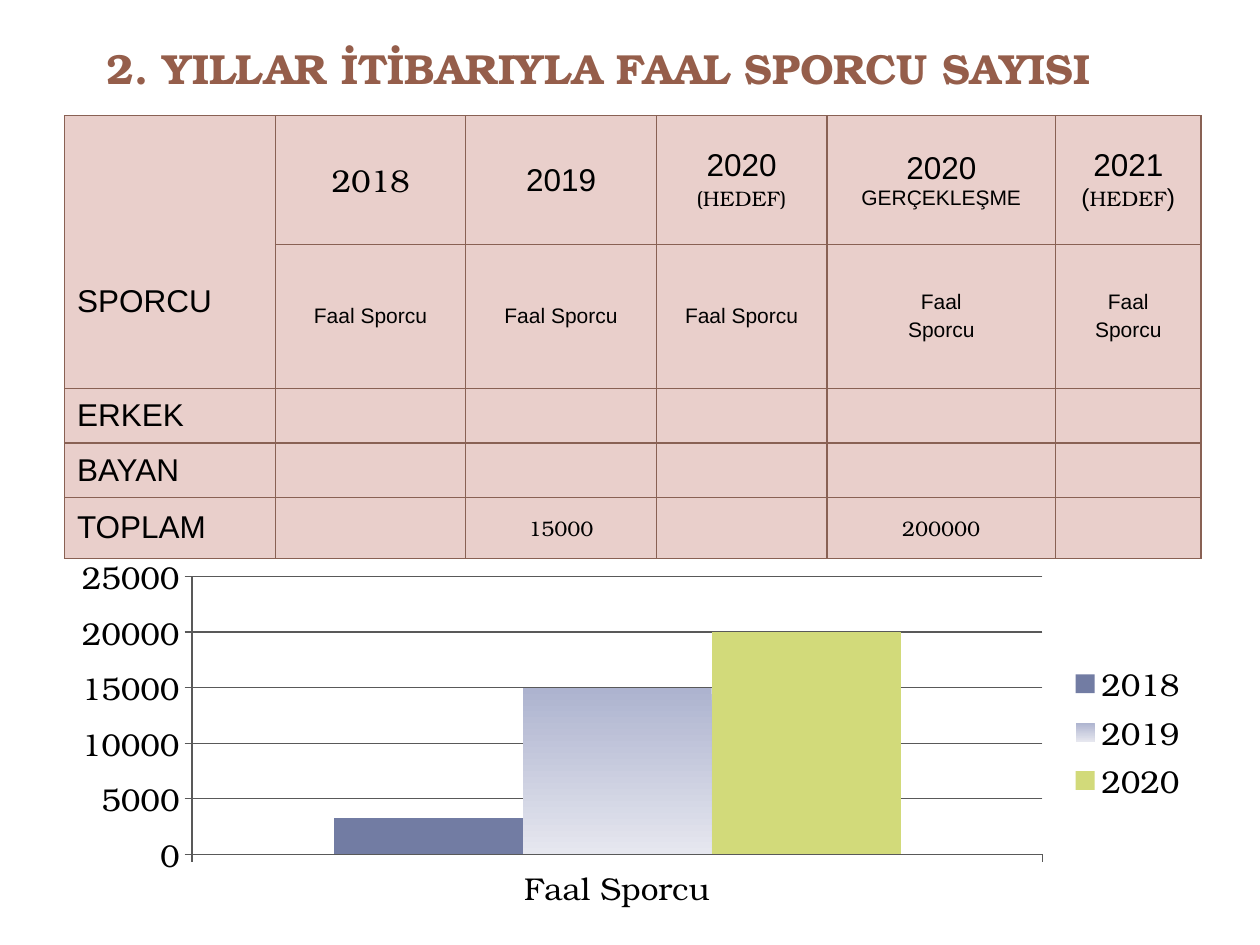
from dataclasses import dataclass

import pptx
import pptx.chart.data
import pptx.dml.color
import pptx.enum.chart
import pptx.enum.text
import pptx.oxml
import pptx.oxml.ns
import pptx.util

Cm, Pt = pptx.util.Cm, pptx.util.Pt
ALIGN, ANCHOR = pptx.enum.text.PP_ALIGN, pptx.enum.text.MSO_ANCHOR
SANS, SERIF = "Arial", "TeX Gyre Bonum"
COLORS = {
    "title": "955E4B", "text": "000000", "cell": "E9CFCB", "border": "896154",
    "axis": "595959", "2018": "727CA3", "2019 top": "ADB3CF",
    "2019 bottom": "E6E7EF", "2020": "D2DA7A",
}


@dataclass
class Run:
    text: str
    size: int = 18
    font: str = SANS


@dataclass
class CellText:
    row: int
    column: int
    lines: list[list[Run]]
    align: ALIGN = ALIGN.CENTER
    space_ratio: float = 0.2


def rgb(name: str) -> pptx.dml.color.RGBColor:
    return pptx.dml.color.RGBColor.from_string(COLORS[name])


def apply_format(target, values: dict) -> None:
    for name, value in values.items():
        setattr(target, name, value)


def add_run(paragraph, run: Run, color: str = "text", bold: bool = False) -> None:
    part = paragraph.add_run()
    part.text = run.text
    apply_format(part.font, {"size": Pt(run.size), "name": run.font, "bold": bold})
    part.font.color.rgb = rgb(color)


def write_cell(cell, content: CellText) -> None:
    for index, line in enumerate(content.lines):
        frame = cell.text_frame
        paragraph = frame.paragraphs[0] if index == 0 else frame.add_paragraph()
        apply_format(paragraph, {
            "alignment": content.align,
            "space_before": Pt(round(line[0].size * content.space_ratio, 1)),
        })
        for run in line:
            add_run(paragraph, run)


def style_cell(cell) -> None:
    cell.vertical_anchor = ANCHOR.MIDDLE
    cell.fill.solid()
    cell.fill.fore_color.rgb = rgb("cell")
    properties = cell._tc.get_or_add_tcPr()
    # Borders come before the fill in the cell properties
    for index, side in enumerate(("lnL", "lnR", "lnT", "lnB")):
        properties.insert(index, pptx.oxml.parse_xml(
            f'<a:{side} {pptx.oxml.ns.nsdecls("a")} w="9525"><a:solidFill>'
            f'<a:srgbClr val="{COLORS["border"]}"/></a:solidFill></a:{side}>'))


def add_title(slide) -> None:
    box = slide.shapes.add_textbox(Cm(1.9), Cm(0.74), Cm(22.86), Cm(3.17))
    apply_format(box.text_frame, {"word_wrap": True, "vertical_anchor": ANCHOR.TOP})
    add_run(box.text_frame.paragraphs[0],
            Run("2. YILLAR İTİBARIYLA FAAL SPORCU SAYISI", 24, SERIF), "title", True)


def add_athlete_table(slide) -> None:
    widths = [4.25, 3.84, 3.84, 3.44, 4.61, 2.93]
    heights = [2.6, 2.9, 1.1, 1.1, 1.22]
    table = slide.shapes.add_table(
        len(heights), len(widths), Cm(1.3), Cm(2.33),
        Cm(sum(widths)), Cm(sum(heights))).table
    apply_format(table, {"first_row": False, "horz_banding": False})
    for column, width in zip(table.columns, widths):
        column.width = Cm(width)
    for row, height in zip(table.rows, heights):
        row.height = Cm(height)
    for cell in table.iter_cells():
        style_cell(cell)

    # The row heading spans both header rows
    heading = table.cell(0, 0)
    heading.merge(table.cell(1, 0))
    apply_format(heading, {"vertical_anchor": ANCHOR.BOTTOM, "margin_bottom": Cm(1.4)})

    years = [
        [[Run("2018", font=SERIF)]],
        [[Run("2019")]],
        [[Run("2020")], [Run("(HEDEF)", 12, SERIF)]],
        [[Run("2020")], [Run("GERÇEKLEŞME", 12)]],
        [[Run("2021")], [Run("(", 14), Run("HEDEF", 12, SERIF), Run(")", 14)]],
    ]
    one_line = [[Run("Faal Sporcu", 12)]]
    two_lines = [[Run("Faal", 12)], [Run("Sporcu", 12)]]
    contents = [CellText(0, column, lines, space_ratio=0)
                for column, lines in enumerate(years, 1)]
    contents += [CellText(1, column, one_line if column < 4 else two_lines)
                 for column in range(1, 6)]
    contents += [CellText(row, 0, [[Run(label)]], ALIGN.LEFT)
                 for row, label in ((0, "SPORCU"), (2, "ERKEK"), (3, "BAYAN"), (4, "TOPLAM"))]
    contents += [CellText(4, column, [[Run(total, 12, SERIF)]])
                 for column, total in ((2, "15000"), (4, "200000"))]
    for content in contents:
        write_cell(table.cell(content.row, content.column), content)


def add_athlete_chart(slide) -> None:
    data = pptx.chart.data.CategoryChartData()
    data.categories = ["Faal Sporcu"]
    for year, athletes in (("2018", 3300), ("2019", 15000), ("2020", 20000)):
        data.add_series(year, [athletes])
    chart = slide.shapes.add_chart(
        pptx.enum.chart.XL_CHART_TYPE.COLUMN_CLUSTERED,
        Cm(1.19), Cm(11.05), Cm(23.01), Cm(7.42), data).chart
    apply_format(chart, {"has_title": False, "has_legend": True})
    apply_format(chart.font, {"size": Pt(18), "name": SERIF})
    chart.font.color.rgb = rgb("text")
    apply_format(chart.legend, {
        "position": pptx.enum.chart.XL_LEGEND_POSITION.RIGHT, "include_in_layout": False})

    # Axes and gridlines
    apply_format(chart.value_axis, {
        "minimum_scale": 0, "maximum_scale": 25000, "major_unit": 5000,
        "has_major_gridlines": True})
    for axis in (chart.category_axis, chart.value_axis):
        axis.major_tick_mark = pptx.enum.chart.XL_TICK_MARK.OUTSIDE
    for part in (chart.category_axis, chart.value_axis, chart.value_axis.major_gridlines):
        part.format.line.color.rgb = rgb("axis")
        part.format.line.width = Pt(0.75)

    # Columns
    plot = chart.plots[0]
    apply_format(plot, {"gap_width": 150, "overlap": 0, "vary_by_categories": False})
    for series in plot.series:
        fill = series.format.fill
        if series.name in COLORS:
            fill.solid()
            fill.fore_color.rgb = rgb(series.name)
        else:
            fill.gradient()
            fill.gradient_angle = 270
            for stop, end in zip(fill.gradient_stops, ("top", "bottom")):
                stop.color.rgb = rgb(f"{series.name} {end}")


def main() -> None:
    presentation = pptx.Presentation()
    apply_format(presentation, {"slide_width": Cm(25.4), "slide_height": Cm(19.05)})
    slide = presentation.slides.add_slide(presentation.slide_layouts[6])
    add_title(slide)
    add_athlete_table(slide)
    add_athlete_chart(slide)
    presentation.save("out.pptx")


if __name__ == "__main__":
    main()
